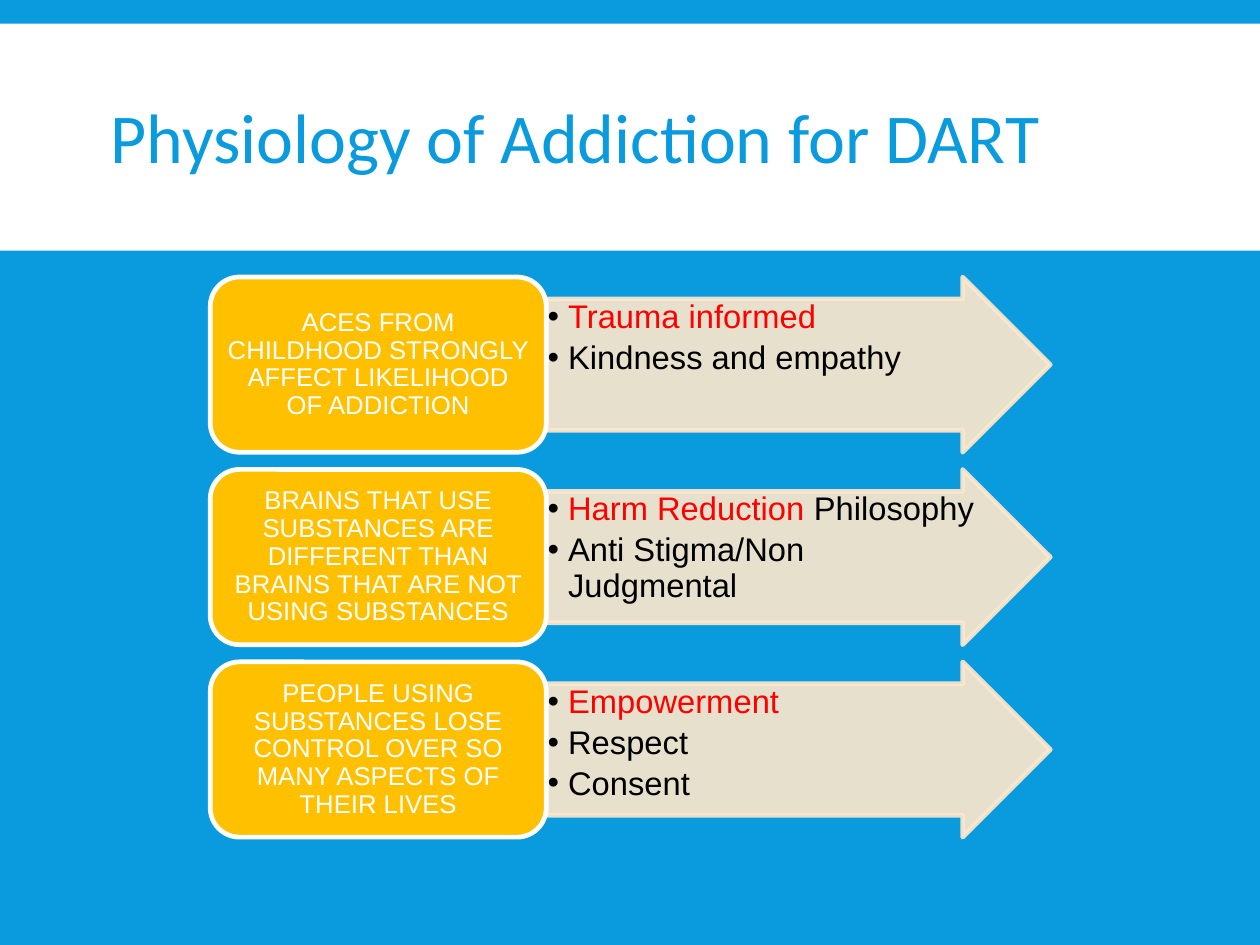
from dataclasses import dataclass

from lxml.etree import SubElement
from pptx import Presentation
from pptx.dml.color import RGBColor
from pptx.enum.shapes import MSO_SHAPE
from pptx.enum.text import MSO_ANCHOR, MSO_AUTO_SIZE, PP_ALIGN
from pptx.oxml.ns import qn
from pptx.util import Cm, Pt


@dataclass(frozen=True)
class Theme:
    blue: RGBColor = RGBColor(0x09, 0x9B, 0xDD)
    white: RGBColor = RGBColor(0xFF, 0xFF, 0xFF)
    amber: RGBColor = RGBColor(0xFF, 0xC0, 0x00)
    cream: RGBColor = RGBColor(0xFF, 0xE8, 0xCC)
    red: RGBColor = RGBColor(0xFF, 0x00, 0x00)
    black: RGBColor = RGBColor(0x00, 0x00, 0x00)
    title_font: str = "Calibri"
    body_font: str = "Arial"
    title_size: Pt = Pt(30)
    point_size: Pt = Pt(14)
    label_size: Pt = Pt(11)
    outline: Pt = Pt(2)


THEME = Theme()

# Each row: label, then points; a point is (red text, black text).
ROWS = [
    ("ACES FROM CHILDHOOD STRONGLY AFFECT LIKELIHOOD OF ADDICTION",
     [("Trauma informed", ""), ("", "Kindness and empathy")]),
    ("BRAINS THAT USE SUBSTANCES ARE DIFFERENT THAN BRAINS THAT ARE NOT USING SUBSTANCES",
     [("Harm Reduction ", "Philosophy"), ("", "Anti Stigma/Non Judgmental")]),
    ("PEOPLE USING SUBSTANCES LOSE CONTROL OVER SO MANY ASPECTS OF THEIR LIVES",
     [("Empowerment", ""), ("", "Respect"), ("", "Consent")]),
]

LABEL_LEFT, LABEL_WIDTH = Cm(3.18), Cm(5.08)
ARROW_LEFT, ARROW_WIDTH = LABEL_LEFT + LABEL_WIDTH, Cm(7.62)
FIRST_TOP, ROW_HEIGHT, ROW_PITCH = Cm(4.19), Cm(2.65), Cm(2.91)
POINTS_INSET, POINTS_WIDTH = Cm(0.33), Cm(6.55)


def apply(target, **values):
    for name, value in values.items():
        setattr(target, name, value)


def set_frame(frame, anchor, left, top, right, bottom):
    apply(frame, word_wrap=True, auto_size=MSO_AUTO_SIZE.NONE, vertical_anchor=anchor,
          margin_left=Cm(left), margin_top=Cm(top),
          margin_right=Cm(right), margin_bottom=Cm(bottom))


def add_run(paragraph, text, font, size, color):
    run = paragraph.add_run()
    run.text = text
    apply(run.font, name=font, size=size)
    run.font.color.rgb = color


def add_panel(slide, preset, box, fill, line=None):
    panel = slide.shapes.add_shape(preset, *box)
    panel.shadow.inherit = False
    panel.fill.solid()
    panel.fill.fore_color.rgb = fill
    if line is None:
        panel.line.fill.background()
    else:
        panel.line.color.rgb = line
        panel.line.width = THEME.outline
    return panel


def make_translucent(panel, percent):
    """Set the opacity of the panel's fill and line."""
    for color in panel._element.spPr.iter(qn("a:srgbClr")):
        SubElement(color, qn("a:alpha"), val=str(percent * 1000))


def add_bullet(paragraph):
    properties = paragraph._p.get_or_add_pPr()
    indent = Cm(0.31)
    properties.set("marL", str(indent))
    properties.set("indent", str(-indent))
    bullet_color = SubElement(properties, qn("a:buClr"))
    SubElement(bullet_color, qn("a:srgbClr"), val=str(THEME.black))
    SubElement(properties, qn("a:buFont"), typeface=THEME.body_font)
    SubElement(properties, qn("a:buChar"), char="•")


def add_title(slide, text):
    title = slide.shapes.title
    apply(title, left=Cm(1.42), top=Cm(0.58), width=Cm(16.21), height=Cm(3.15))
    set_frame(title.text_frame, MSO_ANCHOR.MIDDLE, 0.25, 0.25, 0.25, 0.25)
    heading = title.text_frame.paragraphs[0]
    apply(heading, alignment=PP_ALIGN.LEFT, line_spacing=0.85)
    add_run(heading, text, THEME.title_font, THEME.title_size, THEME.blue)
    # Bring the title in front of the white band.
    slide.shapes._spTree.append(title._element)


def add_arrow(slide, top):
    arrow = add_panel(slide, MSO_SHAPE.RIGHT_ARROW,
                      (ARROW_LEFT, top, ARROW_WIDTH, ROW_HEIGHT), THEME.cream, THEME.cream)
    arrow.adjustments[0], arrow.adjustments[1] = 0.75, 0.5
    make_translucent(arrow, 90)


def add_points(slide, top, points):
    frame = slide.shapes.add_textbox(ARROW_LEFT, top + POINTS_INSET, POINTS_WIDTH,
                                     ROW_HEIGHT - 2 * POINTS_INSET).text_frame
    set_frame(frame, MSO_ANCHOR.TOP, 0.02, 0.02, 0.02, 0.02)
    for index, (red_text, black_text) in enumerate(points):
        point = frame.add_paragraph() if index else frame.paragraphs[0]
        add_bullet(point)
        apply(point, alignment=PP_ALIGN.LEFT, line_spacing=0.9, space_after=Pt(2.4))
        for text, color in ((red_text, THEME.red), (black_text, THEME.black)):
            if text:
                add_run(point, text, THEME.body_font, THEME.point_size, color)


def add_label(slide, top, text):
    label = add_panel(slide, MSO_SHAPE.ROUNDED_RECTANGLE,
                      (LABEL_LEFT, top, LABEL_WIDTH, ROW_HEIGHT), THEME.amber, THEME.white)
    set_frame(label.text_frame, MSO_ANCHOR.MIDDLE, 0.12, 0.06, 0.12, 0.06)
    paragraph = label.text_frame.paragraphs[0]
    apply(paragraph, alignment=PP_ALIGN.CENTER, line_spacing=0.9)
    add_run(paragraph, text, THEME.body_font, THEME.label_size, THEME.white)


def main():
    deck = Presentation()
    apply(deck, slide_width=Cm(19.05), slide_height=Cm(14.29))
    slide = deck.slides.add_slide(deck.slide_layouts[5])
    slide.background.fill.solid()
    slide.background.fill.fore_color.rgb = THEME.blue

    title_band = (0, Cm(0.36), deck.slide_width, Cm(3.43))
    add_panel(slide, MSO_SHAPE.RECTANGLE, title_band, THEME.white)
    add_title(slide, "Physiology of Addiction for DART")
    for row, (label, points) in enumerate(ROWS):
        top = FIRST_TOP + row * ROW_PITCH
        add_arrow(slide, top)
        add_points(slide, top, points)
        add_label(slide, top, label)
    deck.save("out.pptx")


if __name__ == "__main__":
    main()
